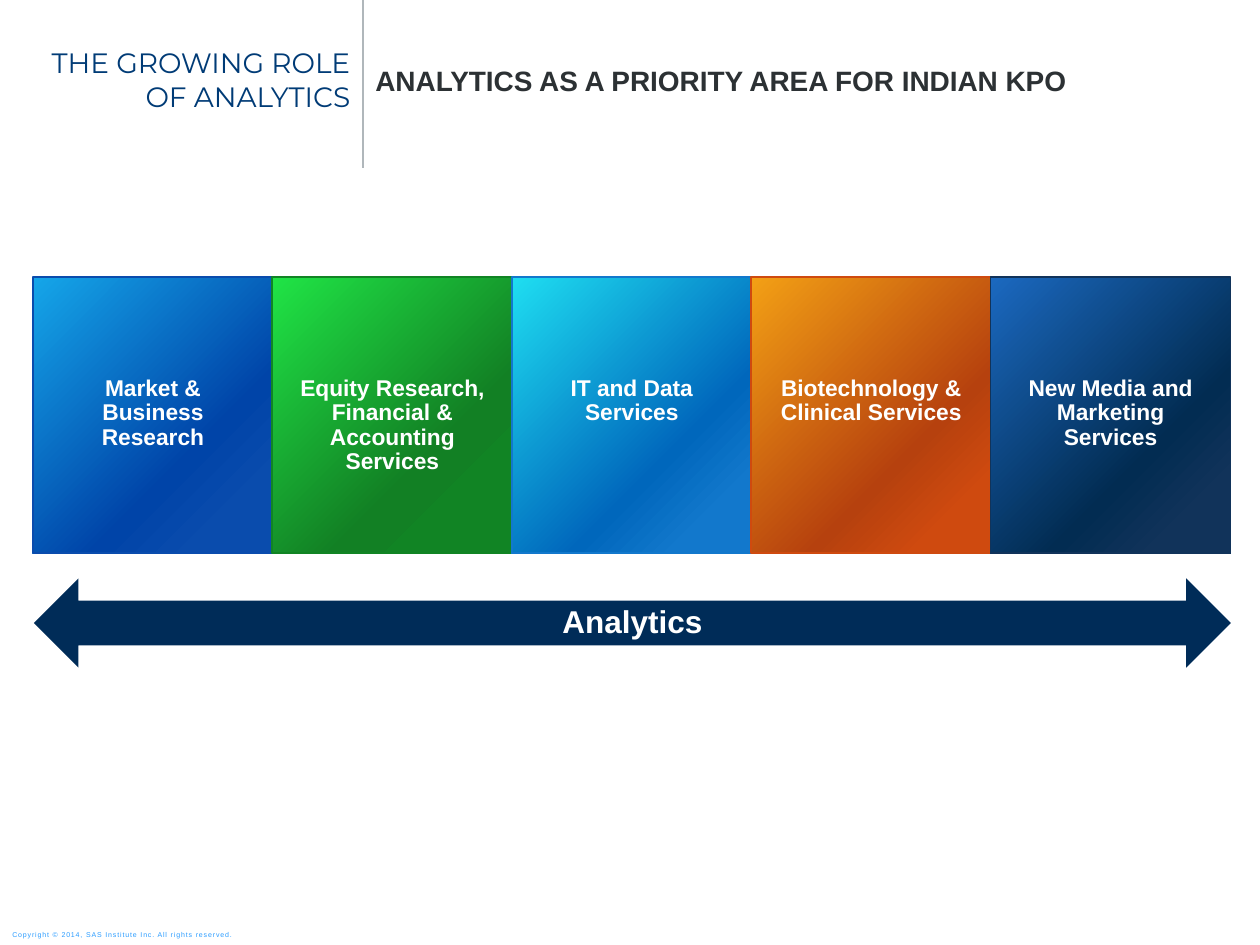
from copy import deepcopy
from dataclasses import dataclass

from lxml import etree
from pptx import Presentation
from pptx.dml.color import RGBColor
from pptx.enum.shapes import MSO_CONNECTOR, MSO_SHAPE
from pptx.enum.text import MSO_ANCHOR, MSO_AUTO_SIZE, PP_ALIGN
from pptx.oxml.ns import qn
from pptx.util import Pt

LEFT, CENTER, RIGHT = PP_ALIGN.LEFT, PP_ALIGN.CENTER, PP_ALIGN.RIGHT
TOP, MIDDLE = MSO_ANCHOR.TOP, MSO_ANCHOR.MIDDLE
RECTANGLE, DOUBLE_ARROW = MSO_SHAPE.RECTANGLE, MSO_SHAPE.LEFT_RIGHT_ARROW
STRAIGHT, NO_AUTOFIT = MSO_CONNECTOR.STRAIGHT, MSO_AUTO_SIZE.NONE
TITLE_ONLY = 5


@dataclass(frozen=True)
class TextStyle:
    size: float
    color: str
    font: str = "Arial"
    bold: bool = False
    align: PP_ALIGN = LEFT
    anchor: MSO_ANCHOR = MIDDLE
    line_spacing: float = 1.0
    tracking: float = 0
    insets: tuple[float, float, float, float] = (7.2, 3.6, 7.2, 3.6)


@dataclass(frozen=True)
class Theme:
    title: TextStyle = TextStyle(16, "003B76", font="Montserrat", align=RIGHT)
    subtitle: TextStyle = TextStyle(16, "2C3134", bold=True)
    sector: TextStyle = TextStyle(13, "FFFFFF", bold=True, align=CENTER, anchor=TOP,
                                  line_spacing=0.9, insets=(10.8, 56.7, 10.8, 3.6))
    arrow: TextStyle = TextStyle(18, "FFFFFF", bold=True, align=CENTER, line_spacing=0.9)
    copyright: TextStyle = TextStyle(4, "2A9CFF", tracking=0.5)
    rule: str = "B0B7BB"
    arrow_fill: str = "002C58"
    stops: tuple[float, ...] = (0, 0.65, 0.85)


@dataclass(frozen=True)
class Sector:
    label: str
    shades: tuple[str, str, str]


THEME = Theme()
SECTORS = [
    Sector("Market & Business Research", ("15A6E9", "0044A8", "0A4CAD")),
    Sector("Equity Research, Financial & Accounting Services", ("20E446", "128024", "118424")),
    Sector("IT and Data Services", ("1FDEF1", "0067BC", "1278CC")),
    Sector("Biotechnology & Clinical Services", ("F3A015", "B6410E", "CF4A0F")),
    Sector("New Media and Marketing Services", ("1B69C0", "022C52", "11335A")),
]
SECTOR_LEFT, SECTOR_TOP, SECTOR_PITCH = 18.8, 158.4, 136.8
SECTOR_WIDTH, SECTOR_HEIGHT = 137.2, 157.7


def write(shape, text: str, style: TextStyle) -> None:
    frame = shape.text_frame
    frame.word_wrap = True
    frame.auto_size = NO_AUTOFIT
    frame.vertical_anchor = style.anchor
    (frame.margin_left, frame.margin_top,
     frame.margin_right, frame.margin_bottom) = map(Pt, style.insets)
    paragraph = frame.paragraphs[0]
    paragraph.alignment = style.align
    paragraph.line_spacing = style.line_spacing
    paragraph.space_before = Pt(0)
    run = paragraph.add_run()
    run.text = text
    run.font.name = style.font
    run.font.size = Pt(style.size)
    run.font.bold = style.bold
    run.font.color.rgb = RGBColor.from_string(style.color)
    if style.tracking:
        run.font._element.set("spc", str(int(style.tracking * 100)))


def add_text(slide, box: tuple[float, ...], text: str, style: TextStyle) -> None:
    write(slide.shapes.add_textbox(*map(Pt, box)), text, style)


def shade_diagonally(shape, shades: tuple[str, ...]) -> None:
    shape.fill.gradient()
    shape.fill.gradient_angle = 315  # light corner at top left
    stop_list = shape._element.spPr.find(qn("a:gradFill")).find(qn("a:gsLst"))
    stop_list.append(deepcopy(stop_list[-1]))
    for stop, position, shade in zip(shape.fill.gradient_stops, THEME.stops, shades):
        stop.position = position
        stop.color.rgb = RGBColor.from_string(shade)


def add_sector(slide, index: int, sector: Sector) -> None:
    left = SECTOR_LEFT + index * SECTOR_PITCH
    panel = slide.shapes.add_shape(
        RECTANGLE, Pt(left), Pt(SECTOR_TOP), Pt(SECTOR_WIDTH), Pt(SECTOR_HEIGHT))
    panel.shadow.inherit = False
    shade_diagonally(panel, sector.shades)
    panel.line.color.rgb = RGBColor.from_string(sector.shades[-1])
    panel.line.width = Pt(1)
    write(panel, sector.label, THEME.sector)


def add_arrow(slide) -> None:
    arrow = slide.shapes.add_shape(DOUBLE_ARROW, Pt(19.4), Pt(330.5), Pt(684), Pt(51))
    arrow.shadow.inherit = False
    arrow.fill.solid()
    arrow.fill.fore_color.rgb = RGBColor.from_string(THEME.arrow_fill)
    arrow.line.fill.background()
    write(arrow, "Analytics", THEME.arrow)


def add_header_rule(slide) -> None:
    rule = slide.shapes.add_connector(STRAIGHT, Pt(207.4), Pt(0), Pt(207.4), Pt(95.8))
    rule.line.color.rgb = RGBColor.from_string(THEME.rule)
    rule.line.width = Pt(1)
    etree.SubElement(rule._element.spPr, qn("a:effectLst"))


def main() -> None:
    deck = Presentation()
    deck.slide_width, deck.slide_height = Pt(720), Pt(540)
    slide = deck.slides.add_slide(deck.slide_layouts[TITLE_ONLY])

    # Header
    title = slide.shapes.title
    title.left, title.top, title.width, title.height = map(Pt, (9.4, 22.3, 198, 46.1))
    write(title, "THE GROWING ROLE OF ANALYTICS", THEME.title)
    add_header_rule(slide)
    add_text(slide, (207.4, 32.4, 476.6, 26.6),
             "ANALYTICS AS A PRIORITY AREA FOR INDIAN KPO", THEME.subtitle)

    # Sectors and the analytics arrow that spans them
    for index, sector in enumerate(SECTORS):
        add_sector(slide, index, sector)
    add_arrow(slide)

    # Footer
    add_text(slide, (0, 527.8, 152, 12.2),
             "Copyright © 2014, SAS Institute Inc. All rights reserved.", THEME.copyright)

    deck.save("out.pptx")


if __name__ == "__main__":
    main()
